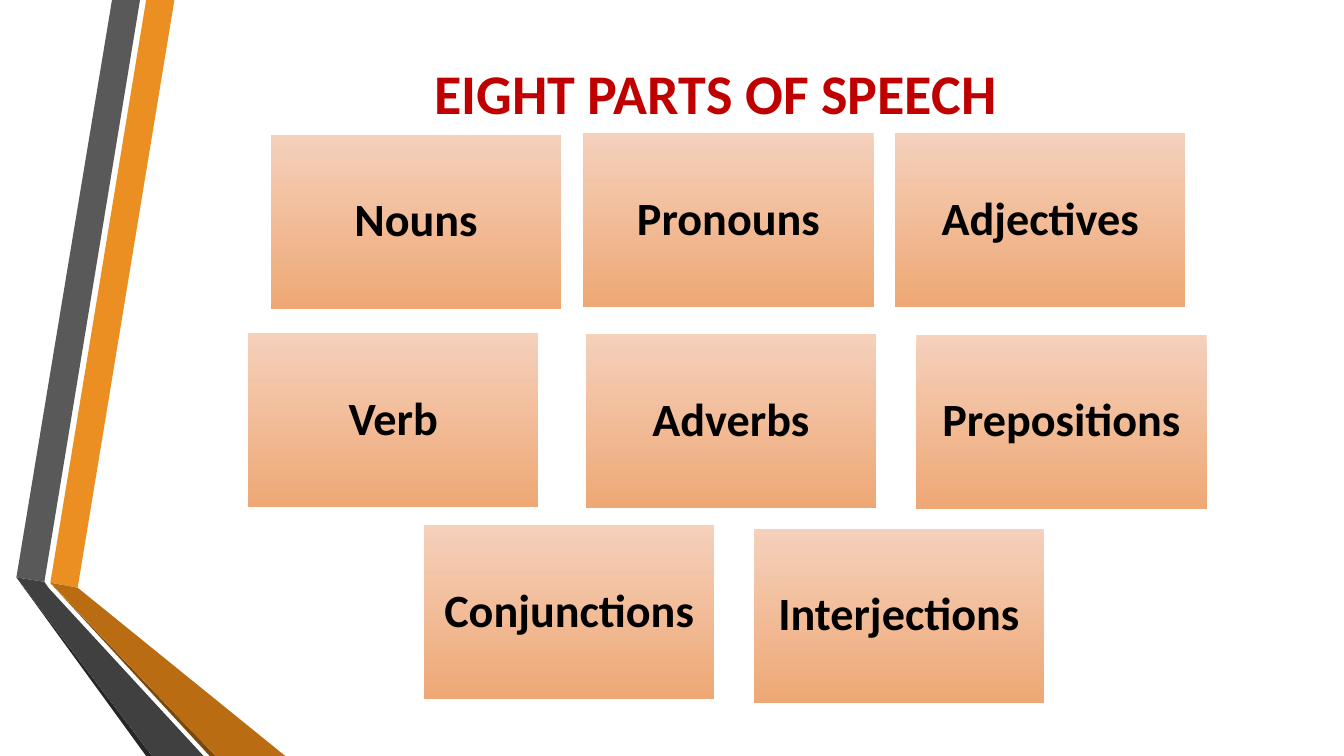
from pptx import Presentation
from pptx.dml.color import RGBColor
from pptx.enum import shapes, text
from pptx.util import Pt

FONT = "Calibri"
WHITE = RGBColor(0xFF, 0xFF, 0xFF)
RED = RGBColor(0xC0, 0x00, 0x00)
BLACK = RGBColor(0x00, 0x00, 0x00)
PEACH_LIGHT = RGBColor(0xF5, 0xD0, 0xBB)
PEACH_DARK = RGBColor(0xEE, 0xA8, 0x75)
ORANGE = RGBColor(0xEB, 0x8F, 0x22)
ORANGE_DARK = RGBColor(0xB9, 0x6C, 0x11)
BROWN = RGBColor(0x7B, 0x48, 0x0B)
GREY = RGBColor(0x59, 0x59, 0x59)
GREY_DARK = RGBColor(0x40, 0x40, 0x40)
CHARCOAL = RGBColor(0x26, 0x26, 0x26)

prs = Presentation()
prs.slide_width, prs.slide_height = Pt(960), Pt(540)
s = prs.slides.add_slide(prs.slide_layouts[6])
s.background.fill.solid()
s.background.fill.fore_color.rgb = WHITE


def write_centred(sp, words, size, color):
    tf = sp.text_frame
    tf.word_wrap = True
    tf.vertical_anchor = text.MSO_ANCHOR.MIDDLE
    p = tf.paragraphs[0]
    p.alignment = text.PP_ALIGN.CENTER
    p.line_spacing = 0.9
    r = p.add_run()
    r.text = words
    r.font.name, r.font.size, r.font.bold = FONT, Pt(size), True
    r.font.color.rgb = color


# Folded ribbons on the left edge, from back to front
ribbons = [
    (ORANGE, [(36, 416.2), (55.5, 419.8), (124.6, 0), (104.4, 0)]),
    (GREY, [(100, 0), (80, 0), (11.7, 412.4), (31.7, 415.6)]),
    (CHARCOAL, [(11.7, 412.4), (104.4, 540), (108.7, 540)]),
    (BROWN, [(36, 416.5), (149.8, 540), (154, 540)]),
    (ORANGE_DARK, [(36, 416.2), (154, 540), (203.8, 540), (55.5, 419.8)]),
    (GREY_DARK, [(11.7, 412.4), (108.7, 540), (145.4, 540), (34.6, 419.8),
                 (31.7, 415.6)]),
]
for color, corners in ribbons:
    points = [(Pt(x), Pt(y)) for x, y in corners]
    builder = s.shapes.build_freeform(*points[0])
    builder.add_line_segments(points[1:], close=True)
    sp = builder.convert_to_shape()
    sp.shadow.inherit = False
    sp.fill.solid()
    sp.fill.fore_color.rgb = color
    sp.line.fill.background()

title = s.shapes.add_textbox(Pt(116.6), Pt(0), Pt(789.1), Pt(138.2))
write_centred(title, "EIGHT PARTS OF SPEECH", 40, RED)

CARD_W, CARD_H, CARD_INSET = 207.4, 124.4, 10
cards = [
    ("Nouns", 193.5, 96.1), ("Pronouns", 416.6, 95), ("Adjectives", 639.4, 95),
    ("Verb", 177.2, 238.1), ("Adverbs", 418.4, 238.8), ("Prepositions", 654.5, 239.2),
    ("Conjunctions", 302.9, 375), ("Interjections", 538.4, 377.8),
]
for name, left, top in cards:
    sp = s.shapes.add_shape(shapes.MSO_SHAPE.RECTANGLE, Pt(left), Pt(top),
                            Pt(CARD_W), Pt(CARD_H))
    sp.shadow.inherit = False
    sp.line.fill.background()
    sp.fill.gradient()
    sp.fill.gradient_angle = 270
    for stop, color in zip(sp.fill.gradient_stops, (PEACH_LIGHT, PEACH_DARK)):
        stop.color.rgb = color
    tf = sp.text_frame
    tf.margin_left = tf.margin_right = tf.margin_top = tf.margin_bottom = Pt(CARD_INSET)
    write_centred(sp, name, 33, BLACK)

prs.save("out.pptx")
